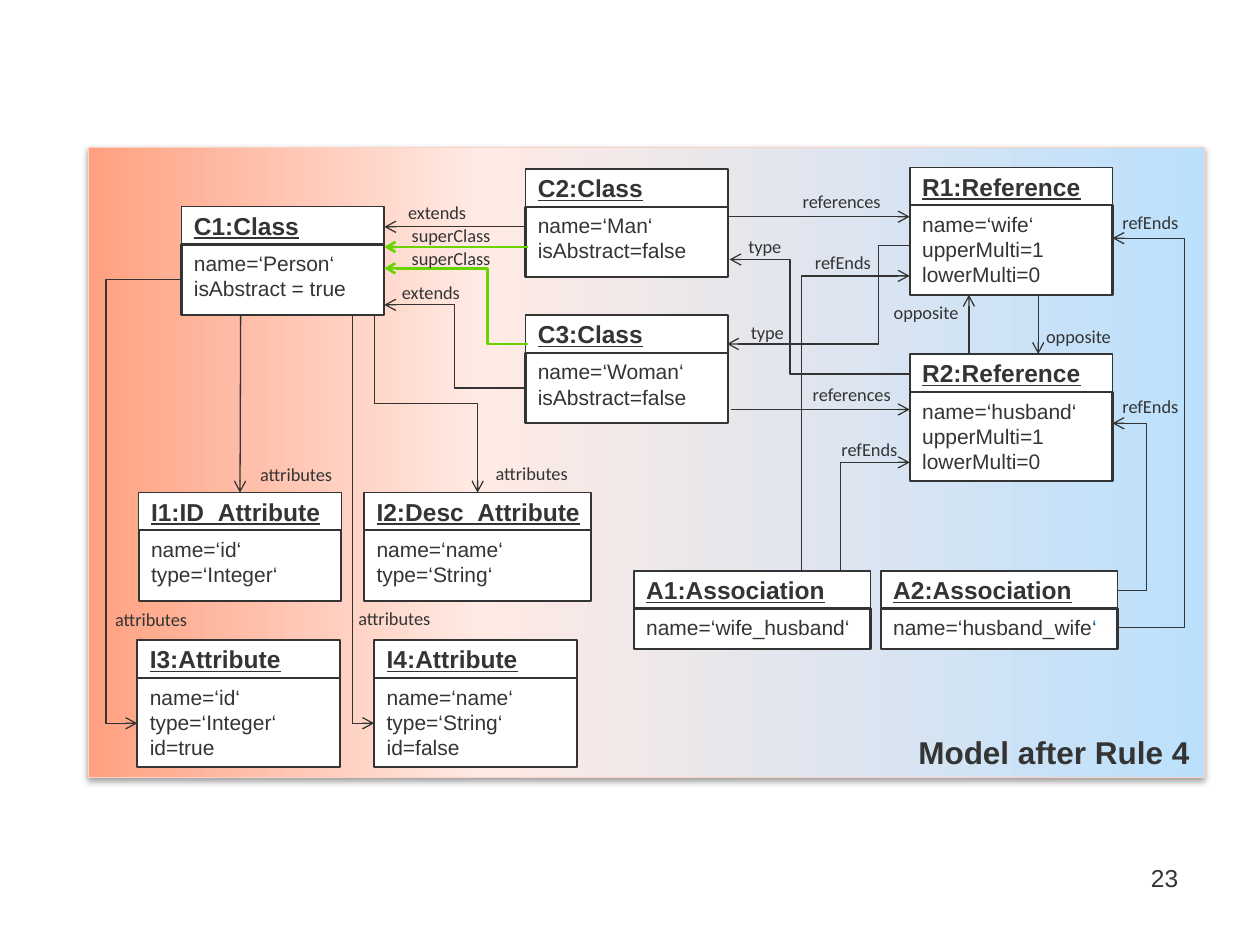
import copy
import pptx
import pptx.dml.color
import pptx.enum.shapes
import pptx.enum.text
import pptx.oxml
import pptx.oxml.ns
import pptx.util
from pptx.util import Inches

KIND = pptx.enum.shapes.MSO_CONNECTOR
RECT = pptx.enum.shapes.MSO_SHAPE.RECTANGLE
ALIGN = pptx.enum.text.PP_ALIGN
ANCHOR = pptx.enum.text.MSO_ANCHOR
DARK, GREEN = "343434", "6AD400"
qn = pptx.oxml.ns.qn


def ink(code):
    return pptx.dml.color.RGBColor.from_string(code)


def write(shape, lines, size, face="Arial", bold=None, under=None, align=ALIGN.LEFT):
    frame = shape.text_frame
    frame.text = "\n".join(lines)
    for para in frame.paragraphs:
        para.alignment = align
        font = para.font
        font.size, font.name = pptx.util.Pt(size), face
        font.bold, font.underline = bold, under
        font.color.rgb = ink(DARK)


deck = pptx.Presentation()
deck.slide_width, deck.slide_height = Inches(10), Inches(7.5)
slide = deck.slides.add_slide(deck.slide_layouts[6])
shapes = slide.shapes

# Background panel: three-stop gradient and a soft shadow
panel = shapes.add_shape(RECT, Inches(0.7), Inches(1.17), Inches(8.86), Inches(5))
panel.fill.gradient()
panel.fill.gradient_angle = 0
stops = panel._element.spPr.find(qn("a:gradFill")).find(qn("a:gsLst"))
stops.append(copy.deepcopy(stops[-1]))
colors = [(0, "FFA080"), (0.35, "FFEAE4"), (1, "BBE0FC")]
for stop, (pos, code) in zip(panel.fill.gradient_stops, colors):
    stop.position = pos
    stop.color.rgb = ink(code)
panel.line.color.rgb = ink("FFD2C5")
panel.line.width = pptx.util.Pt(0.75)
panel._element.spPr.append(pptx.oxml.parse_xml(
    f'<a:effectLst {pptx.oxml.ns.nsdecls("a")}>'
    '<a:outerShdw blurRad="39370" dist="20320" dir="5400000" rotWithShape="0">'
    '<a:srgbClr val="000000"><a:alpha val="38000"/></a:srgbClr>'
    '</a:outerShdw></a:effectLst>'))

# Objects: left, top, width, heading, attribute lines
boxes = [
    (1.44, 1.64, 1.61, "C1:Class", ["name=‘Person‘", "isAbstract = true"]),
    (4.17, 1.34, 1.61, "C2:Class", ["name=‘Man‘", "isAbstract=false"]),
    (4.17, 2.5, 1.61, "C3:Class", ["name=‘Woman‘", "isAbstract=false"]),
    (7.22, 1.33, 1.61, "R1:Reference", ["name=‘wife‘", "upperMulti=1", "lowerMulti=0"]),
    (7.22, 2.81, 1.61, "R2:Reference", ["name=‘husband‘", "upperMulti=1", "lowerMulti=0"]),
    (1.1, 3.91, 1.61, "I1:ID_Attribute", ["name=‘id‘", "type=‘Integer‘"]),
    (2.89, 3.91, 1.8, "I2:Desc_Attribute", ["name=‘name‘", "type=‘String‘"]),
    (5.03, 4.53, 1.88, "A1:Association", ["name=‘wife_husband‘"]),
    (6.99, 4.53, 1.88, "A2:Association", ["name=‘husband_wife"]),
    (1.09, 5.08, 1.61, "I3:Attribute", ["name=‘id‘", "type=‘Integer‘", "id=true"]),
    (2.97, 5.08, 1.61, "I4:Attribute", ["name=‘name‘", "type=‘String‘", "id=false"]),
]
heights = {1: 0.32, 2: 0.56, 3: 0.71}
heads, bodies = {}, {}
for left, top, width, title, lines in boxes:
    head = shapes.add_shape(RECT, Inches(left), Inches(top), Inches(width), Inches(0.3))
    body = shapes.add_shape(RECT, Inches(left), Inches(top + 0.3), Inches(width),
                            Inches(heights[len(lines)]))
    for part, weight in ((head, 1), (body, 1.25)):
        part.shadow.inherit = False
        part.fill.solid()
        part.fill.fore_color.rgb = ink("FFFFFF")
        part.line.color.rgb = ink(DARK)
        part.line.width = pptx.util.Pt(weight)
    head.text_frame.word_wrap = False
    head.text_frame.vertical_anchor = ANCHOR.MIDDLE
    body.text_frame.vertical_anchor = ANCHOR.TOP
    write(head, [title], 14, bold=True, under=True)
    write(body, lines, 12)
    heads[title], bodies[title] = head, body

# Closing quote in blue
quote = bodies["A2:Association"].text_frame.paragraphs[0].add_run()
quote.text = "‘"
quote.font.color.rgb = ink("075590")

# Arrows: start, end, x of the bend (None = straight), colour
# "mid" leaves downward and bends halfway, "turn" leaves vertically and bends once
wires = [
    (4.17, 1.8, 3.05, 1.8, None, DARK),
    (4.17, 3.08, 3.05, 2.42, 3.61, DARK),
    (8.24, 2.34, 8.24, 2.81, None, DARK),
    (7.69, 2.81, 7.69, 2.34, None, DARK),
    (5.78, 1.72, 7.22, 1.72, None, DARK),
    (5.8, 3.25, 7.22, 3.25, None, DARK),
    (7.22, 2.97, 5.79, 2.06, 6.27, DARK),
    (7.22, 1.95, 5.77, 2.73, 6.97, DARK),
    (1.91, 2.5, 1.91, 3.91, None, DARK),
    (2.97, 2.5, 3.79, 3.91, "mid", DARK),
    (6.67, 4.53, 7.22, 3.67, "turn", DARK),
    (8.87, 4.69, 8.83, 3.36, 9.1, DARK),
    (8.87, 4.98, 8.83, 1.89, 9.4, DARK),
    (6.36, 4.53, 7.22, 2.19, "turn", DARK),
    (1.44, 2.22, 1.09, 5.74, 0.84, DARK),
    (2.8, 2.5, 2.97, 5.74, "turn", DARK),
    (4.19, 2.73, 3.05, 2.13, 3.87, GREEN),
    (4.19, 1.96, 3.05, 1.96, None, GREEN),
]
for x1, y1, x2, y2, bend, code in wires:
    kind = KIND.ELBOW if bend else KIND.STRAIGHT
    wire = shapes.add_connector(kind, Inches(x1), Inches(y1), Inches(x2), Inches(y2))
    wire.line.color.rgb = ink(code)
    wire.line.width = pptx.util.Pt(1.5 if code == GREEN else 0.75)
    props = wire._element.spPr
    pptx.oxml.xmlchemy.OxmlElement  # noqa
    tail = pptx.oxml.parse_xml(f'<a:tailEnd {pptx.oxml.ns.nsdecls("a")} type="arrow"/>')
    props.find(qn("a:ln")).append(tail)
    props.append(pptx.oxml.parse_xml(f'<a:effectLst {pptx.oxml.ns.nsdecls("a")}/>'))
    geom = props.find(qn("a:prstGeom"))
    if bend in ("mid", "turn"):
        # Turn the frame a quarter about its centre so the first leg is vertical
        wide, high = abs(y2 - y1), abs(x2 - x1)
        wire.left, wire.top = Inches((x1 + x2 - wide) / 2), Inches((y1 + y2 - high) / 2)
        wire.width, wire.height = Inches(wide), Inches(high)
        frame = props.find(qn("a:xfrm"))
        down = y2 > y1
        frame.set("rot", "16200000" if down else "5400000")
        frame.set("flipH", "1")
        frame.set("flipV", "0" if down else "1")
        if bend == "turn":
            geom.set("prst", "bentConnector2")
    elif bend:
        ratio = round((bend - x1) / (x2 - x1) * 100000)
        geom.find(qn("a:avLst")).append(pptx.oxml.parse_xml(
            f'<a:gd {pptx.oxml.ns.nsdecls("a")} name="adj1" fmla="val {ratio}"/>'))
    elif (x2, y2) == (1.91, 3.91):
        wire.end_connect(heads["I1:ID_Attribute"], 0)

# Arrow labels: left, top, width, text
labels = [
    (2.94, 1.55, 1.06, "extends"), (2.89, 2.18, 1.06, "extends"),
    (8.13, 2.53, 0.86, "opposite"), (6.88, 2.34, 0.94, "opposite"),
    (6.17, 1.46, 1.02, "references"), (6.25, 2.99, 1.02, "references"),
    (5.56, 1.82, 1.02, "type"), (5.58, 2.5, 1.02, "type"),
    (1.84, 3.63, 1.02, "attributes"), (3.71, 3.62, 1.02, "attributes"),
    (0.73, 4.78, 0.94, "attributes"), (2.66, 4.77, 0.94, "attributes"),
    (6.18, 1.94, 1.02, "refEnds"), (6.39, 3.43, 1.02, "refEnds"),
    (8.74, 1.63, 0.78, "refEnds"), (8.74, 3.09, 0.78, "refEnds"),
    (3.05, 1.73, 1.06, "superClass"), (3.05, 1.91, 1.06, "superClass"),
]
for left, top, width, text in labels:
    label = shapes.add_textbox(Inches(left), Inches(top), Inches(width), Inches(0.28))
    label.text_frame.word_wrap = True
    write(label, [text], 10.5, "Calibri", align=ALIGN.CENTER)

# Caption and page number
note = shapes.add_textbox(Inches(7.19), Inches(5.77), Inches(2.38), Inches(0.4))
write(note, ["Model after Rule 4"], 18, bold=True)
page = shapes.add_textbox(Inches(8.28), Inches(6.8), Inches(1.17), Inches(0.5))
page.text_frame.word_wrap = True
write(page, ["23"], 14, align=ALIGN.RIGHT)

deck.save("out.pptx")
